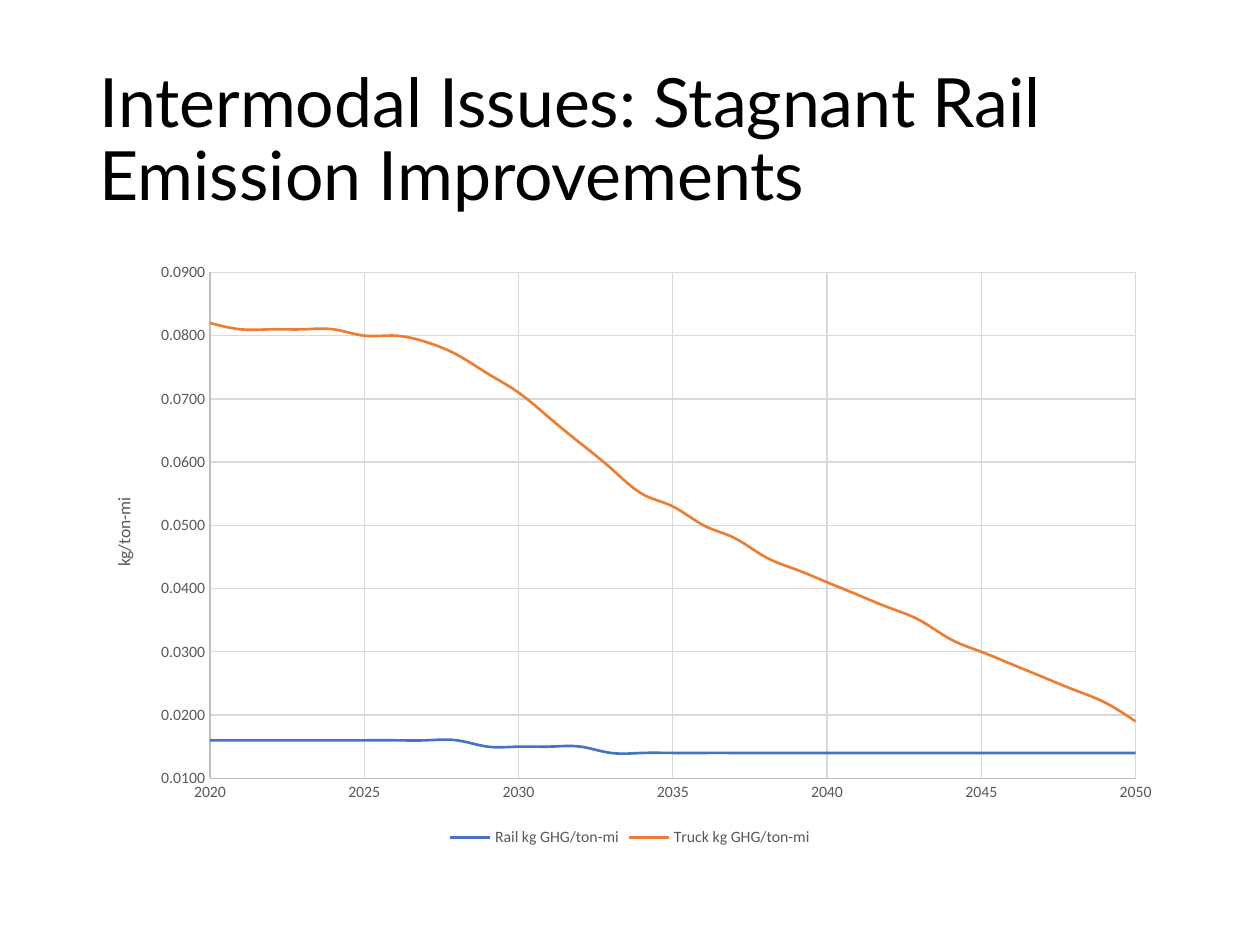
from dataclasses import dataclass

from lxml.etree import SubElement
from pptx import Presentation
from pptx.chart.data import XyChartData
from pptx.dml.color import RGBColor
from pptx.enum.chart import XL_CHART_TYPE as ChartType
from pptx.enum.chart import XL_LEGEND_POSITION as LegendPos
from pptx.enum.chart import XL_TICK_MARK as Tick
from pptx.enum.text import MSO_ANCHOR, MSO_AUTO_SIZE, PP_ALIGN
from pptx.oxml.ns import qn
from pptx.util import Pt

BLACK = RGBColor(0, 0, 0)
GRAY = RGBColor(0x59, 0x59, 0x59)
AXIS_GRAY = RGBColor(0xBF, 0xBF, 0xBF)
GRID_GRAY = RGBColor(0xD9, 0xD9, 0xD9)
BLUE = RGBColor(0x44, 0x72, 0xC4)
ORANGE = RGBColor(0xED, 0x7D, 0x31)

LEFT, WIDTH = Pt(49.68), Pt(620.64)
CHART_TOP, CHART_HEIGHT = Pt(144), Pt(342.72)
PLOT_LEFT, PLOT_TOP = Pt(120), Pt(155.7)
PLOT_WIDTH, PLOT_HEIGHT = Pt(528.9), Pt(289.1)
YEARS = range(2020, 2051)


@dataclass
class Emissions:
    name: str
    color: RGBColor
    values: list[float]


@dataclass
class AxisScale:
    low: float
    high: float
    step: float
    number_format: str


RAIL = Emissions("Rail kg GHG/ton-mi", BLUE,
                 [0.016] * 9 + [0.015] * 4 + [0.014] * 18)
TRUCK = Emissions("Truck kg GHG/ton-mi", ORANGE, [
    0.082, 0.081, 0.081, 0.081, 0.081, 0.080, 0.080, 0.079,
    0.077, 0.074, 0.071, 0.067, 0.063, 0.059, 0.055, 0.053,
    0.050, 0.048, 0.045, 0.043, 0.041, 0.039, 0.037, 0.035,
    0.032, 0.030, 0.028, 0.026, 0.024, 0.022, 0.019])


def apply_format(target, **values) -> None:
    for name, value in values.items():
        setattr(target, name, value)


def format_font(font, size: float, color: RGBColor, name: str = "Calibri") -> None:
    apply_format(font, name=name, size=Pt(size), bold=False)
    font.color.rgb = color


def format_line(line, color: RGBColor, width: float) -> None:
    line.color.rgb = color
    line.width = Pt(width)


def format_axis(axis, scale: AxisScale) -> None:
    apply_format(axis, minimum_scale=scale.low, maximum_scale=scale.high,
                 major_unit=scale.step, major_tick_mark=Tick.NONE,
                 minor_tick_mark=Tick.NONE, has_major_gridlines=True)
    apply_format(axis.tick_labels, number_format=scale.number_format,
                 number_format_is_linked=False)
    format_font(axis.tick_labels.font, 9, GRAY)
    format_line(axis.format.line, AXIS_GRAY, 0.75)
    format_line(axis.major_gridlines.format.line, GRID_GRAY, 0.75)


def smooth_curve(curve) -> None:
    """Scatter series have no public smooth property."""
    ser = curve._element
    smooth = ser.find(qn("c:smooth"))
    if smooth is None:
        smooth = SubElement(ser, qn("c:smooth"))
    smooth.set("val", "1")


def place_plot(chart) -> None:
    """Fix the inner plot area, in fractions of the chart."""
    area = chart._chartSpace.chart.plotArea
    for old in area.findall(qn("c:layout")):
        area.remove(old)
    layout = SubElement(area, qn("c:layout"))
    area.insert(0, layout)
    manual = SubElement(layout, qn("c:manualLayout"))
    settings = dict(layoutTarget="inner", xMode="edge", yMode="edge",
                    x=(PLOT_LEFT - LEFT) / WIDTH,
                    y=(PLOT_TOP - CHART_TOP) / CHART_HEIGHT,
                    w=PLOT_WIDTH / WIDTH, h=PLOT_HEIGHT / CHART_HEIGHT)
    for tag, value in settings.items():
        SubElement(manual, qn(f"c:{tag}")).set("val", str(value))


def add_title(slide, text: str) -> None:
    sp = slide.shapes.title
    apply_format(sp, left=LEFT, top=Pt(28.8), width=WIDTH, height=Pt(104.4))
    tf = sp.text_frame
    apply_format(tf, text=text, word_wrap=True, auto_size=MSO_AUTO_SIZE.NONE,
                 vertical_anchor=MSO_ANCHOR.MIDDLE)
    p = tf.paragraphs[0]
    apply_format(p, alignment=PP_ALIGN.LEFT, line_spacing=0.9)
    format_font(p.runs[0].font, 38.8, BLACK, "Lato")


def add_emissions_chart(slide, series: list[Emissions]) -> None:
    data = XyChartData(number_format="0.0000")
    for item in series:
        points = data.add_series(item.name)
        for year, value in zip(YEARS, item.values):
            points.add_data_point(year, value)
    chart = slide.shapes.add_chart(
        ChartType.XY_SCATTER_SMOOTH_NO_MARKERS,
        LEFT, CHART_TOP, WIDTH, CHART_HEIGHT, data).chart
    apply_format(chart, has_title=False, has_legend=True)
    format_font(chart.font, 10, BLACK)

    # Axes
    format_axis(chart.category_axis, AxisScale(2020, 2050, 5, "0"))
    format_axis(chart.value_axis, AxisScale(0.01, 0.09, 0.01, "0.0000"))
    tf = chart.value_axis.axis_title.text_frame
    tf.text = "kg/ton-mi"
    format_font(tf.paragraphs[0].runs[0].font, 10, GRAY)

    # Legend
    apply_format(chart.legend, position=LegendPos.BOTTOM,
                 include_in_layout=False)
    format_font(chart.legend.font, 9, GRAY)

    # Curves
    plot = chart.plots[0]
    plot.vary_by_categories = False
    for curve, item in zip(plot.series, series):
        smooth_curve(curve)
        format_line(curve.format.line, item.color, 1.5)
    place_plot(chart)


def main() -> None:
    prs = Presentation()
    apply_format(prs, slide_width=Pt(720), slide_height=Pt(540))
    slide = prs.slides.add_slide(prs.slide_layouts[5])
    add_title(slide, "Intermodal Issues: Stagnant Rail Emission Improvements")
    add_emissions_chart(slide, [RAIL, TRUCK])
    prs.save("out.pptx")


if __name__ == "__main__":
    main()
